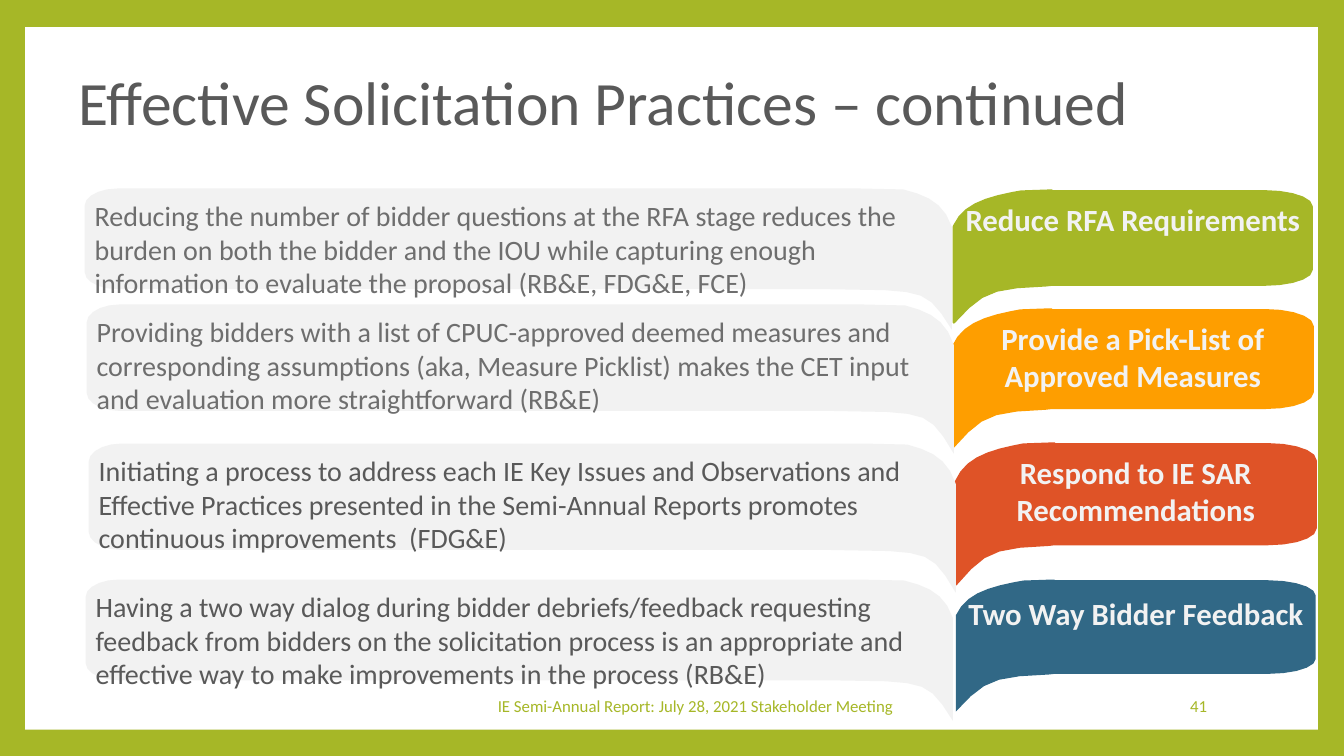
import pptx
import pptx.dml.color
import pptx.enum.shapes
import pptx.enum.text
import pptx.util

Inches = pptx.util.Inches
Pt = pptx.util.Pt
ALIGN = pptx.enum.text.PP_ALIGN
ANCHOR = pptx.enum.text.MSO_ANCHOR

GREEN, WHITE, PALE = "A6B727", "FFFFFF", "F2F2F2"
DARK, MUTED = "595959", "6E6E6E"

# Outlines in percent of width and height: a pair of numbers is a corner,
# six numbers are a Bezier curve (two controls and an end)
PRACTICE_OUTLINE = [
    (3.8, 0), (89.3, 0), (94.4, 0.7),
    (97.3, 5, 99.1, 10.7, 100, 27.1),
    (100, 100),
    (97.7, 77.1, 97.1, 73.6, 92.3, 72.1),
    (85.6, 71.4), (3.8, 71.4),
    (1.7, 71.4, 0, 65.7, 0, 59.3),
    (0, 12.1),
    (0, 5.7, 1.7, 0, 3.8, 0),
]
LABEL_OUTLINE = [
    (27.5, 0), (27.5, 0.5), (86.8, 0.5),
    (94.1, 0.5, 100, 5.7, 100, 12.1),
    (100, 60),
    (100, 66.4, 94.1, 71.4, 86.8, 71.4),
    (27.5, 71.4), (25.8, 71.9),
    (9.8, 73.4, 7.8, 77.1, 0, 100),
    (0, 27.1),
    (2.2, 14.3, 6.2, 8.6, 12.3, 4.3),
    (16, 2.1), (18.8, 0.7), (26.3, 0),
]

# Practices: box, text, colour
PRACTICES = [
    ((0.84, 1.87, 8.6, 1.4),
     "Reducing the number of bidder questions at the RFA stage reduces the burden on both "
     "the bidder and the IOU while capturing enough information to evaluate the proposal "
     "(RB&E, FDG&E, FCE)", MUTED),
    ((0.86, 3.02, 8.6, 1.48),
     "Providing bidders with a list of CPUC-approved deemed measures and corresponding "
     "assumptions (aka, Measure Picklist) makes the CET input and evaluation more "
     "straightforward (RB&E)", MUTED),
    ((0.88, 4.4, 8.6, 1.48),
     "Initiating a process to address each IE Key Issues and Observations and Effective "
     "Practices presented in the Semi-Annual Reports promotes continuous improvements  "
     "(FDG&E)", DARK),
    ((0.85, 5.75, 8.6, 1.4),
     "Having a two way dialog during bidder debriefs/feedback requesting feedback from "
     "bidders on the solicitation process is an appropriate and effective way to make "
     "improvements in the process (RB&E)", DARK),
]

# Labels: box, text, colour, outline width, top inset
LABELS = [
    ((9.46, 1.89, 3.55, 1.31), "Reduce RFA Requirements", GREEN, 1.5, 0.1),
    ((9.45, 3.07, 3.57, 1.37), "Provide a Pick-List of Approved Measures", "FE9E00", 1.5, 0.1),
    ((9.48, 4.4, 3.57, 1.4), "Respond to IE SAR Recommendations", "DF5327", 1.5, 0.1),
    ((9.48, 5.75, 3.57, 1.31), "Two Way Bidder Feedback", "316886", 0, 0.15),
]


def rgb(hex_colour):
    return pptx.dml.color.RGBColor.from_string(hex_colour)


def apply_format(target, values):
    for name, value in values.items():
        setattr(target, name, value)


def paint(shape, fill, line_width=0):
    shape.shadow.inherit = False
    shape.fill.solid()
    shape.fill.fore_color.rgb = rgb(fill)
    if line_width:
        shape.line.color.rgb = rgb(fill)
        shape.line.width = Pt(line_width)
    else:
        shape.line.fill.background()


def write(shape, text, colour, font, paragraph=None, frame=None):
    text_frame = shape.text_frame
    apply_format(text_frame, {"word_wrap": True, "vertical_anchor": ANCHOR.MIDDLE, **(frame or {})})
    line = text_frame.paragraphs[0]
    apply_format(line, {"alignment": ALIGN.LEFT, **(paragraph or {})})
    run = line.add_run()
    run.text = text
    apply_format(run.font, {"name": "Calibri", **font})
    run.font.color.rgb = rgb(colour)


def add_text(slide, box, text, colour, size, **paragraph):
    textbox = slide.shapes.add_textbox(*map(Inches, box))
    write(textbox, text, colour, {"size": Pt(size)}, paragraph)


def curve_points(start, curve, steps=5):
    """Points along a cubic Bezier curve, without its start."""
    controls = [start, curve[0:2], curve[2:4], curve[4:6]]
    for step in range(1, steps + 1):
        t = step / steps
        weights = ((1 - t) ** 3, 3 * t * (1 - t) ** 2, 3 * t * t * (1 - t), t ** 3)
        yield tuple(sum(w * c[axis] for w, c in zip(weights, controls)) for axis in (0, 1))


def add_ribbon(slide, box, outline):
    left, top, width, height = box
    points = [outline[0]]
    for piece in outline[1:]:
        points.extend([piece] if len(piece) == 2 else curve_points(points[-1], piece))
    placed = [(Inches(left + width * x / 100), Inches(top + height * y / 100)) for x, y in points]
    builder = slide.shapes.build_freeform(*placed[0])
    builder.add_line_segments(placed[1:], close=True)
    return builder.convert_to_shape()


def add_practice(slide, box, text, colour):
    practice = add_ribbon(slide, box, PRACTICE_OUTLINE)
    paint(practice, PALE)
    write(practice, text, colour, {"size": Pt(20)}, {"space_after": Pt(6)},
          {"vertical_anchor": ANCHOR.TOP, "margin_top": Inches(0.1), "margin_bottom": Inches(0.5)})


def add_label(slide, box, text, fill, line_width, top_inset):
    label = add_ribbon(slide, box, LABEL_OUTLINE)
    paint(label, fill, line_width)
    write(label, text, PALE, {"size": Pt(22), "bold": True}, {"alignment": ALIGN.CENTER},
          {"vertical_anchor": ANCHOR.TOP, "margin_top": Inches(top_inset)})


def main():
    deck = pptx.Presentation()
    apply_format(deck, {"slide_width": Inches(13.33), "slide_height": Inches(7.5)})
    slide = deck.slides.add_slide(deck.slide_layouts[6])

    # Green frame around a white panel
    slide.background.fill.solid()
    slide.background.fill.fore_color.rgb = rgb(GREEN)
    panel = slide.shapes.add_shape(pptx.enum.shapes.MSO_SHAPE.RECTANGLE,
                                   *map(Inches, (0.25, 0.27, 12.82, 6.97)))
    paint(panel, WHITE)

    # Title, footer and slide number
    add_text(slide, (0.68, 0.31, 11.39, 1.48), "Effective Solicitation Practices – continued",
             DARK, 44, line_spacing=0.9)
    add_text(slide, (4.32, 6.8, 5.16, 0.4),
             "IE Semi-Annual Report: July 28, 2021 Stakeholder Meeting",
             GREEN, 12, alignment=ALIGN.CENTER)
    add_text(slide, (10.2, 6.8, 1.87, 0.4), "41", GREEN, 12, alignment=ALIGN.RIGHT)

    # Labels on the right, practices in front of their edges
    for label in LABELS:
        add_label(slide, *label)
    for practice in PRACTICES:
        add_practice(slide, *practice)

    deck.save("out.pptx")


if __name__ == "__main__":
    main()
